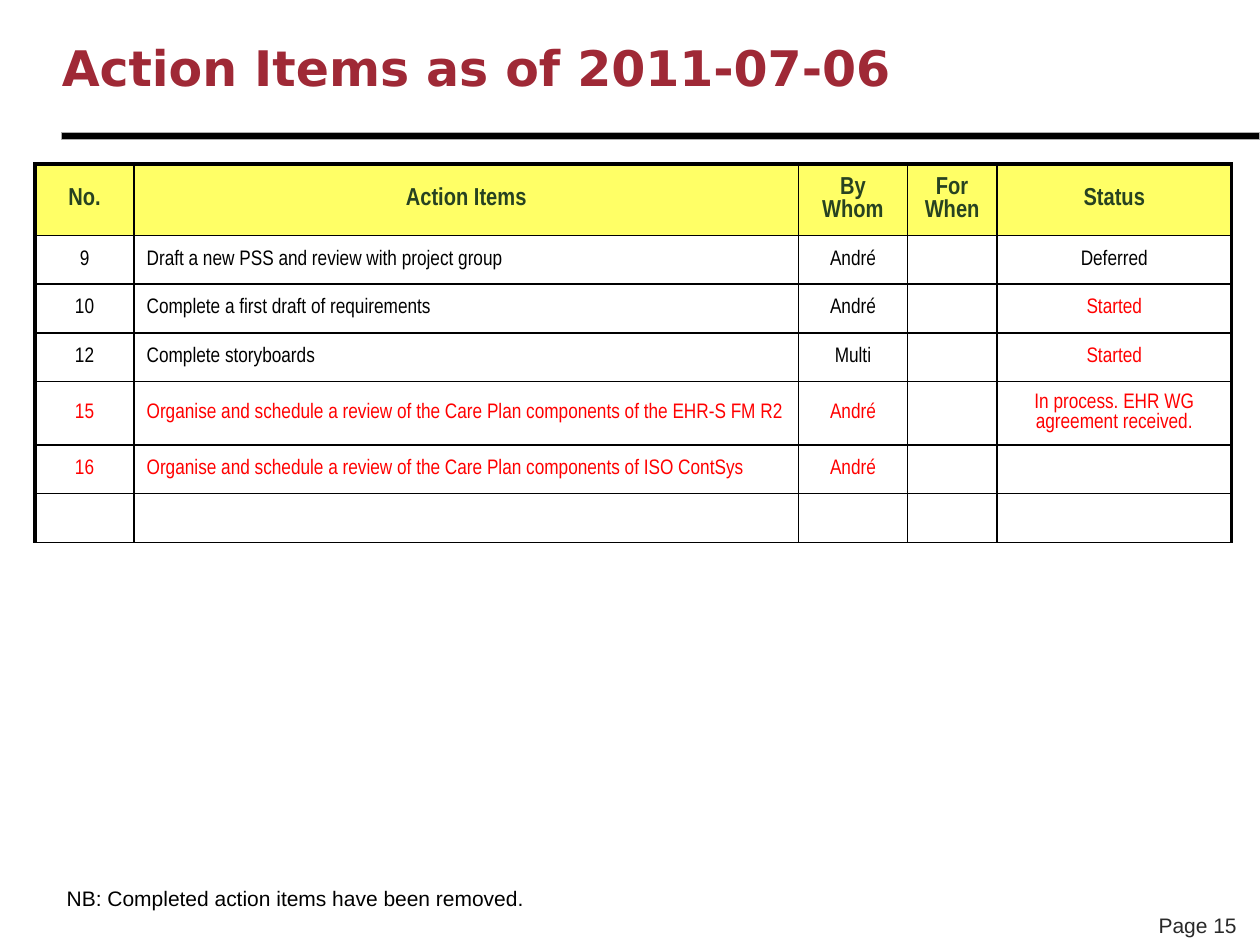
import pptx
import pptx.util
import pptx.dml.color
import pptx.enum.shapes
import pptx.enum.text
import pptx.oxml.ns
from lxml import etree

Pt = pptx.util.Pt
RGBColor = pptx.dml.color.RGBColor
Align = pptx.enum.text.PP_ALIGN
Anchor = pptx.enum.text.MSO_ANCHOR
qn = pptx.oxml.ns.qn

BLACK = RGBColor(0x00, 0x00, 0x00)
RED = RGBColor(0xFF, 0x00, 0x00)
MAROON = RGBColor(0x9F, 0x29, 0x36)
GREEN = RGBColor(0x27, 0x42, 0x21)
YELLOW = RGBColor(0xFF, 0xFF, 0x66)
GREY = RGBColor(0xAD, 0xAD, 0xAD)
CHARCOAL = RGBColor(0x29, 0x29, 0x29)

HEADINGS = ["No.", "Action Items", "By Whom", "For When", "Status"]
COLUMN_WIDTHS = [56.6, 379.7, 62.3, 51.1, 134.2]
HEADER_HEIGHT = 36.9
ITEM_HEIGHT = 27.9
ACTIONS = [
    (["9", "Draft a new PSS and review with project group", "André", "", "Deferred"], BLACK, BLACK),
    (["10", "Complete a first draft of requirements", "André", "", "Started"], BLACK, RED),
    (["12", "Complete storyboards", "Multi", "", "Started"], BLACK, RED),
    (["15", "Organise and schedule a review of the Care Plan components of the EHR-S FM R2",
      "André", "", "In process. EHR WG agreement received."], RED, RED),
    (["16", "Organise and schedule a review of the Care Plan components of ISO ContSys",
      "André", "", ""], RED, RED),
    ([""] * 5, BLACK, BLACK),
]


def write(frame, text, font="Arial", size=12, color=BLACK, bold=False, align=Align.LEFT):
    paragraph = frame.paragraphs[0]
    paragraph.alignment = align
    paragraph.line_spacing = 1.0
    paragraph.space_before = Pt(0)
    if not text:
        etree.SubElement(paragraph._p, qn("a:endParaRPr"), sz=str(size * 100))
        return
    run = paragraph.add_run()
    run.text = text
    run.font.name = font
    run.font.size = Pt(size)
    run.font.bold = bold
    run.font.color.rgb = color


class ActionSlide:
    table_font = "Arial Narrow"
    title_font = "DejaVu Sans"
    outer_border = 2.25
    inner_border = 1

    def __init__(self, slide):
        self.slide = slide

    def title(self, text, left, top, width, height):
        heading = self.slide.shapes.title
        heading.left, heading.top = Pt(left), Pt(top)
        heading.width, heading.height = Pt(width), Pt(height)
        frame = heading.text_frame
        frame.margin_left = frame.margin_right = frame.margin_top = frame.margin_bottom = 0
        frame.vertical_anchor = Anchor.MIDDLE
        frame.auto_size = pptx.enum.text.MSO_AUTO_SIZE.NONE
        write(frame, text, font=self.title_font, size=28, color=MAROON, bold=True)

    def rule(self, left, top, width, height):
        bar = self.slide.shapes.add_shape(
            pptx.enum.shapes.MSO_SHAPE.RECTANGLE, Pt(left), Pt(top), Pt(width), Pt(height))
        bar.shadow.inherit = False
        bar.fill.solid()
        bar.fill.fore_color.rgb = BLACK
        bar.line.color.rgb = GREY
        bar.line.width = Pt(0.75)

    def label(self, text, left, top, width, height, wrap=True, anchor=Anchor.TOP, **style):
        frame = self.slide.shapes.add_textbox(Pt(left), Pt(top), Pt(width), Pt(height)).text_frame
        frame.word_wrap = wrap
        frame.vertical_anchor = anchor
        write(frame, text, **style)

    def borders(self, cell, widths):
        properties = cell._tc.get_or_add_tcPr()
        for position, (side, width) in enumerate(widths.items()):
            edge = etree.Element(qn(f"a:ln{side}"), w=str(int(Pt(width))))
            fill = etree.SubElement(edge, qn("a:solidFill"))
            etree.SubElement(fill, qn("a:srgbClr"), val=str(BLACK))
            properties.insert(position, edge)

    def cell(self, cell, text, fill=None, **style):
        cell.vertical_anchor = Anchor.MIDDLE
        if fill is None:
            cell.fill.background()
        else:
            cell.fill.solid()
            cell.fill.fore_color.rgb = fill
        write(cell.text_frame, text, font=self.table_font, **style)

    def action_table(self, left, top):
        row_heights = [HEADER_HEIGHT] + [ITEM_HEIGHT] * len(ACTIONS)
        table = self.slide.shapes.add_table(
            len(row_heights), len(HEADINGS), Pt(left), Pt(top),
            Pt(sum(COLUMN_WIDTHS)), Pt(sum(row_heights))).table
        table.first_row = table.horz_banding = False
        for column, width in zip(table.columns, COLUMN_WIDTHS):
            column.width = Pt(width)
        for row, height in zip(table.rows, row_heights):
            row.height = Pt(height)

        for column, heading in enumerate(HEADINGS):
            self.cell(table.cell(0, column), heading, fill=YELLOW, size=14, color=GREEN,
                      bold=True, align=Align.CENTER)
        for row, (values, item_color, status_color) in enumerate(ACTIONS, 1):
            for column, value in enumerate(values):
                self.cell(table.cell(row, column), value,
                          color=status_color if HEADINGS[column] == "Status" else item_color,
                          align=Align.LEFT if HEADINGS[column] == "Action Items" else Align.CENTER)

        last = len(HEADINGS) - 1
        for row in range(len(row_heights)):
            for column in range(len(HEADINGS)):
                self.borders(table.cell(row, column), {
                    "L": self.outer_border if column == 0 else self.inner_border,
                    "R": self.outer_border if column == last else self.inner_border,
                    "T": self.outer_border if row == 0 else self.inner_border,
                    "B": self.inner_border,
                })


def main():
    deck = pptx.Presentation()
    deck.slide_width, deck.slide_height = Pt(720), Pt(540)
    page = ActionSlide(deck.slides.add_slide(deck.slide_layouts[5]))
    page.label("Page 15", 635.3, 517.7, 78.5, 21.6, anchor=Anchor.BOTTOM,
               color=CHARCOAL, align=Align.RIGHT)
    page.rule(35.3, 75.6, 684.7, 4.3)
    page.title("Action Items as of 2011-07-06", 35.3, 9, 612, 59)
    page.action_table(20, 93.6)
    page.label("NB: Completed action items have been removed.", 31, 502.6, 278, 21.6, wrap=False)
    deck.save("out.pptx")


if __name__ == "__main__":
    main()
